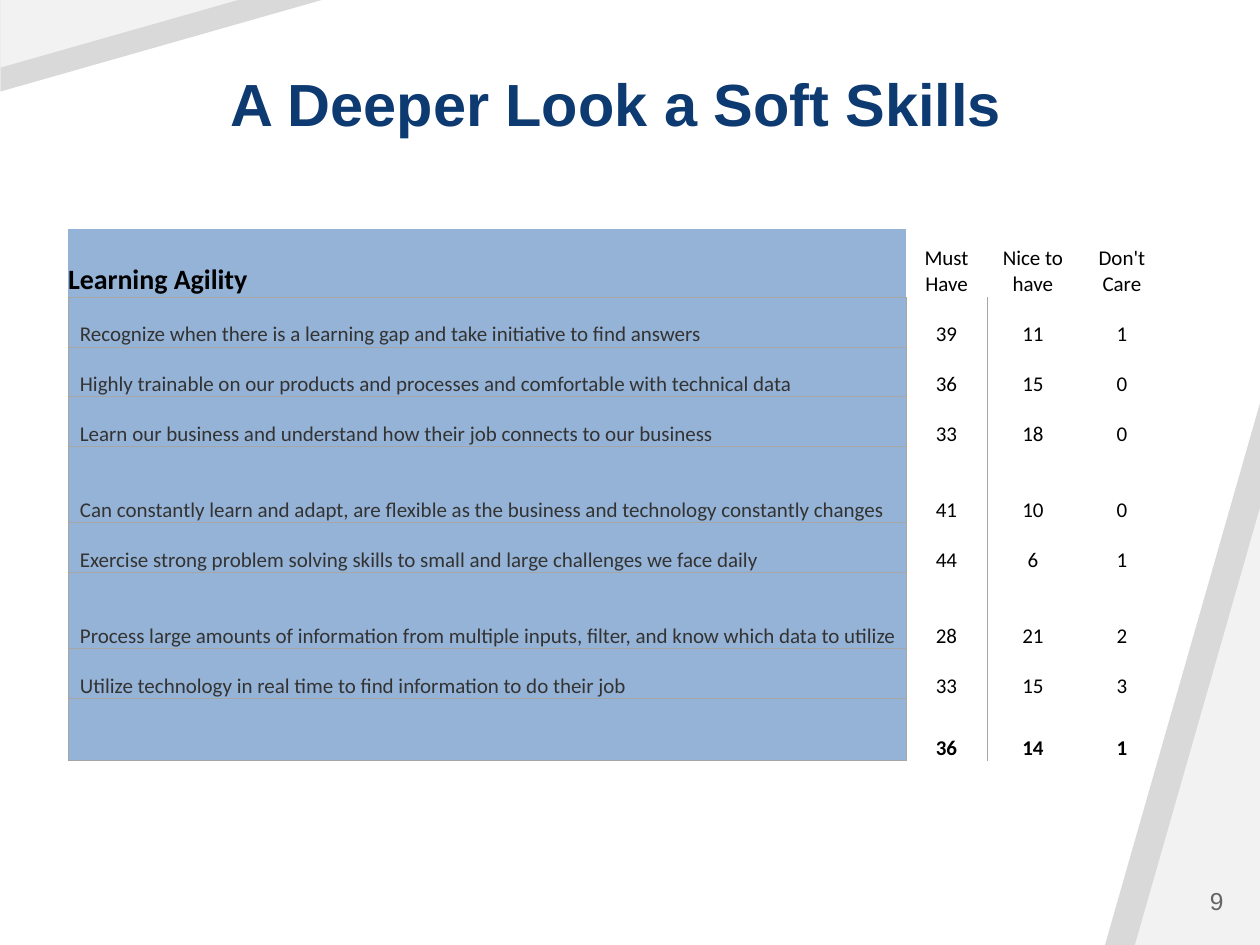
from lxml.etree import SubElement
from pptx import Presentation
from pptx.dml.color import RGBColor
from pptx.enum.shapes import MSO_SHAPE
from pptx.enum.text import MSO_ANCHOR, PP_ALIGN
from pptx.oxml.ns import qn
from pptx.util import Pt

PX = 914400 / 126
COLORS = {
    "band": "D9D9D9", "corner": "F2F2F2", "title": "0D3A70", "number": "646464",
    "skill_fill": "95B3D7", "skill_text": "333333", "text": "000000", "border": "A6A6A6",
}
NO_STYLE = "{2D5ABB26-0587-4C30-8999-92F81FD0307C}"
HEADINGS = ["Learning Agility", "Must Have", "Nice to have", "Don't Care"]
SKILLS = [
    ("Recognize when there is a learning gap and take initiative to find answers", 39, 11, 1),
    ("Highly trainable on our products and processes and comfortable with technical data", 36, 15, 0),
    ("Learn our business and understand how their job connects to our business", 33, 18, 0),
    ("Can constantly learn and adapt, are flexible as the business and technology constantly changes", 41, 10, 0),
    ("Exercise strong problem solving skills to small and large challenges we face daily", 44, 6, 1),
    ("Process large amounts of information from multiple inputs, filter, and know which data to utilize", 28, 21, 2),
    ("Utilize technology in real time to find information to do their job", 33, 15, 3),
]
AVERAGES = ("", 36, 14, 1)
COLUMN_WIDTHS = [838, 81, 92, 86]
ROW_HEIGHTS = [68, 50, 50, 50, 76, 50, 76, 50, 62]


def emu(px):
    return round(px * PX)


class SlideBuilder:
    """Holds the style and the current slide, and adds each kind of element to it."""

    def __init__(self, slide, colors):
        self.slide = slide
        self.colors = colors

    def rgb(self, color):
        return RGBColor.from_string(self.colors[color])

    def set_text(self, frame, text, size, color, align, font="Calibri", bold=False):
        frame.text = text
        paragraph = frame.paragraphs[0]
        paragraph.alignment = align
        for run in paragraph.runs:
            run.font.name = font
            run.font.size = Pt(size)
            run.font.bold = bold
            run.font.color.rgb = self.rgb(color)
        return paragraph

    def triangle(self, box, color, apex=1, rotation=0):
        triangle = self.slide.shapes.add_shape(MSO_SHAPE.ISOSCELES_TRIANGLE, *map(emu, box))
        triangle.adjustments[0] = apex
        triangle.rotation = rotation
        triangle.shadow.inherit = False
        triangle.fill.solid()
        triangle.fill.fore_color.rgb = self.rgb(color)
        triangle.line.fill.background()

    def text(self, box, text, size, color, align, anchor, bold=False):
        frame = self.slide.shapes.add_textbox(*map(emu, box)).text_frame
        frame.word_wrap = True
        frame.vertical_anchor = anchor
        return self.set_text(frame, text, size, color, align, "Arial", bold)

    def borders(self, cell, sides):
        properties = cell._tc.get_or_add_tcPr()
        for position, side in enumerate(sides):
            line = SubElement(properties, qn(f"a:ln{side}"), w=str(Pt(0.5)))
            fill = SubElement(line, qn("a:solidFill"))
            SubElement(fill, qn("a:srgbClr"), val=self.colors["border"])
            properties.insert(position, line)

    def cell(self, cell, text, size, color, align, bold, indent, filled, sides):
        cell.margin_left = emu(indent)
        cell.margin_right = cell.margin_top = cell.margin_bottom = 0
        cell.vertical_anchor = MSO_ANCHOR.BOTTOM
        if filled:
            cell.fill.solid()
            cell.fill.fore_color.rgb = self.rgb("skill_fill")
        else:
            cell.fill.background()
        self.borders(cell, sides)
        self.set_text(cell.text_frame, text, size, color, align, bold=bold)

    def skills_table(self, left, top, widths, heights, rows):
        box = map(emu, (left, top, sum(widths), sum(heights)))
        table = self.slide.shapes.add_table(len(heights), len(widths), *box).table
        table.first_row = table.horz_banding = False
        table._tbl.tblPr.find(qn("a:tableStyleId")).text = NO_STYLE
        for column, width in zip(table.columns, widths):
            column.width = emu(width)
        for row, height in zip(table.rows, heights):
            row.height = emu(height)
        last = len(rows) - 1
        for r, (skill, *counts) in enumerate(rows):
            heading = r == 0
            self.cell(table.cell(r, 0), skill, 16 if heading else 12,
                      "text" if heading else "skill_text", PP_ALIGN.LEFT, heading,
                      0 if heading else 12, True, "B" if heading else "LRTB")
            for c, count in enumerate(counts, 1):
                sides = "L" if c == 1 and not heading else ""
                self.cell(table.cell(r, c), str(count), 12, "text", PP_ALIGN.CENTER,
                          r == last, 0, False, sides)


def main():
    presentation = Presentation()
    presentation.slide_width = emu(1260)
    presentation.slide_height = emu(945)
    builder = SlideBuilder(presentation.slides.add_slide(presentation.slide_layouts[6]), COLORS)

    builder.triangle((1105, 403, 155, 542), "band")
    builder.triangle((1135, 508, 125, 437), "corner")
    builder.triangle((116, -116, 92, 323), "band", apex=0, rotation=90)
    builder.triangle((86, -86, 68, 239), "corner", apex=0, rotation=90)

    title = builder.text((68, 53, 1096, 93), "A Deeper Look a Soft Skills", 34, "title",
                         PP_ALIGN.CENTER, MSO_ANCHOR.BOTTOM, bold=True)
    title.line_spacing = 0.9
    builder.text((1060, 876, 176, 50), "9", 14, "number", PP_ALIGN.RIGHT, MSO_ANCHOR.MIDDLE)
    builder.skills_table(68, 229, COLUMN_WIDTHS, ROW_HEIGHTS, [HEADINGS, *SKILLS, AVERAGES])

    presentation.save("out.pptx")


if __name__ == "__main__":
    main()
